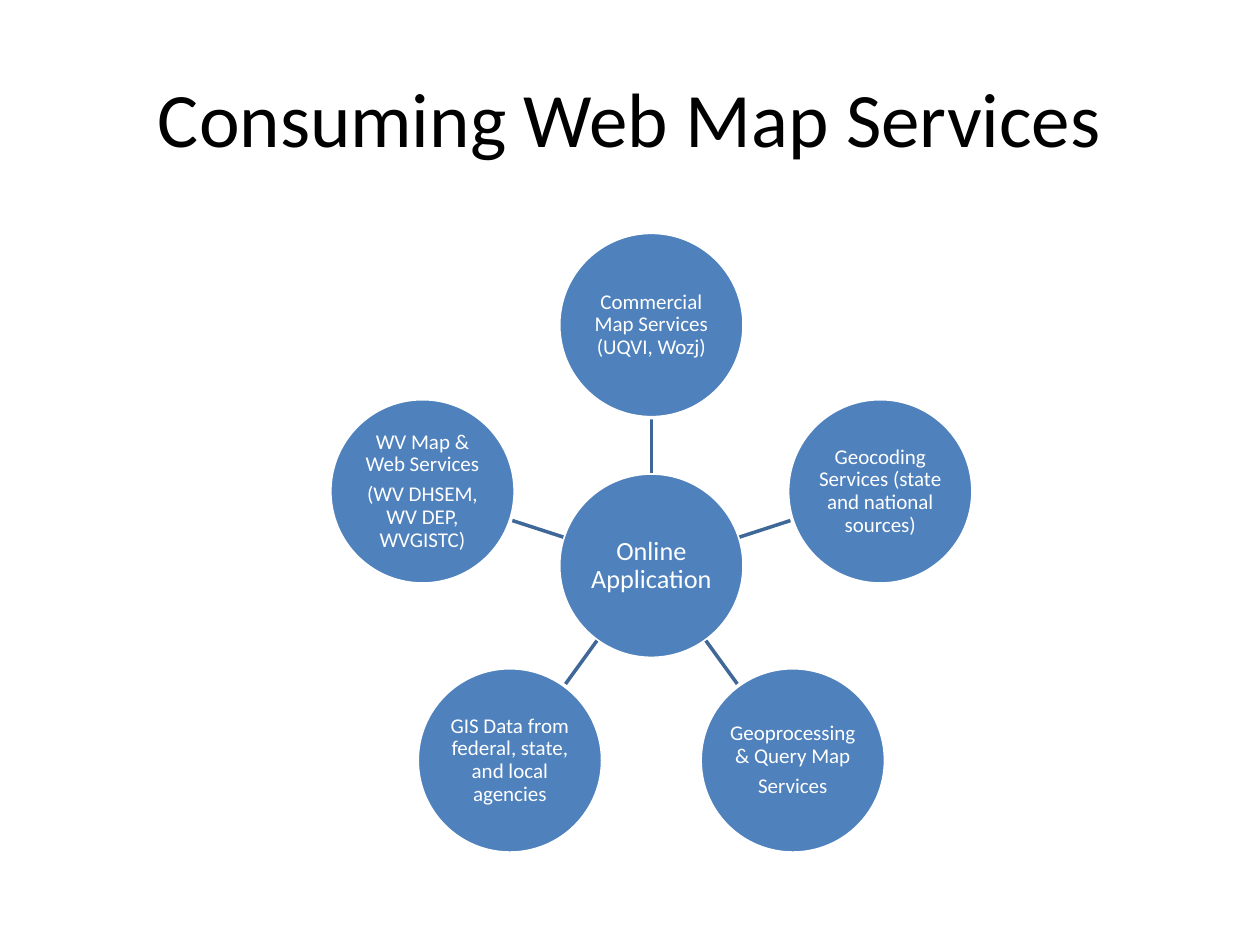
import math

import pptx
import pptx.util
from lxml import etree
from pptx.dml.color import RGBColor
from pptx.enum.shapes import MSO_CONNECTOR, MSO_SHAPE
from pptx.enum.text import MSO_ANCHOR, PP_ALIGN
from pptx.oxml.ns import qn
from pptx.util import Inches

BLACK = RGBColor(0x00, 0x00, 0x00)
WHITE = RGBColor(0xFF, 0xFF, 0xFF)
BLUE = RGBColor(0x4F, 0x81, 0xBD)
DARK_BLUE = RGBColor(0x3F, 0x67, 0x97)

HUB_X, HUB_Y = 5.17, 4.49
DIAMETER = 1.47
ORBIT = 1.91  # distance from the hub's centre to each service's centre

# Clockwise from the top
SERVICES = [
    ["Commercial Map Services (UQVI, Wozj)"],
    ["Geocoding Services (state and national sources)"],
    ["Geoprocessing & Query Map", "Services"],
    ["GIS Data from federal, state, and local agencies"],
    ["WV Map & Web Services", "(WV DHSEM, WV DEP, WVGISTC)"],
]


def write_text(frame, paragraphs, *, size, color, font="Calibri",
               line_spacing=1.0, gap=0, inset=0.1):
    """Fill a text frame with centred paragraphs, gap points apart."""
    frame.word_wrap = True
    frame.vertical_anchor = MSO_ANCHOR.MIDDLE
    frame.margin_left = frame.margin_right = Inches(inset)
    frame.margin_top = frame.margin_bottom = Inches(min(inset, 0.05))
    for index, text in enumerate(paragraphs):
        paragraph = frame.add_paragraph() if index else frame.paragraphs[0]
        paragraph.alignment = PP_ALIGN.CENTER
        paragraph.line_spacing = line_spacing
        if index:
            paragraph.space_before = pptx.util.Pt(gap)
        run = paragraph.add_run()
        run.text = text
        run.font.name = font
        run.font.size = pptx.util.Pt(size)
        run.font.color.rgb = color


class RadialSlide:
    """The current slide and the style of its hub-and-spoke diagram."""

    line_width = pptx.util.Pt(2)

    def __init__(self, slide):
        self.slide = slide

    def title(self, text):
        box = self.slide.shapes.add_textbox(
            Inches(0.5), Inches(0.3), Inches(9), Inches(1.25))
        write_text(box.text_frame, [text], size=44, color=BLACK)

    def circle(self, center, paragraphs, size):
        left, top = (value - DIAMETER / 2 for value in center)
        shape = self.slide.shapes.add_shape(
            MSO_SHAPE.OVAL, Inches(left), Inches(top),
            Inches(DIAMETER), Inches(DIAMETER))
        shape.shadow.inherit = False
        shape.fill.solid()
        shape.fill.fore_color.rgb = BLUE
        shape.line.color.rgb = WHITE
        shape.line.width = self.line_width
        write_text(shape.text_frame, paragraphs, size=size, color=WHITE,
                   line_spacing=0.9, gap=4.2, inset=0.01)

    def spoke(self, start, end):
        connector = self.slide.shapes.add_connector(
            MSO_CONNECTOR.STRAIGHT, *map(Inches, (*start, *end)))
        connector.line.color.rgb = DARK_BLUE
        connector.line.width = self.line_width
        properties = connector._element.spPr
        etree.SubElement(properties, qn("a:effectLst"))


def around_hub(angle, radius):
    """Point at an angle clockwise from the top of the hub."""
    return (HUB_X + radius * math.sin(angle), HUB_Y - radius * math.cos(angle))


def main():
    presentation = pptx.Presentation()
    presentation.slide_width = Inches(10)
    presentation.slide_height = Inches(7.5)
    radial = RadialSlide(
        presentation.slides.add_slide(presentation.slide_layouts[6]))

    radial.title("Consuming Web Map Services")

    # Hub
    radial.circle((HUB_X, HUB_Y), ["Online Application"], size=15)

    # Services with their spokes
    for index, paragraphs in enumerate(SERVICES):
        angle = 2 * math.pi * index / len(SERVICES)
        radial.spoke(around_hub(angle, DIAMETER / 2),
                     around_hub(angle, ORBIT - DIAMETER / 2))
        radial.circle(around_hub(angle, ORBIT), paragraphs, size=12)

    presentation.save("out.pptx")


if __name__ == "__main__":
    main()
